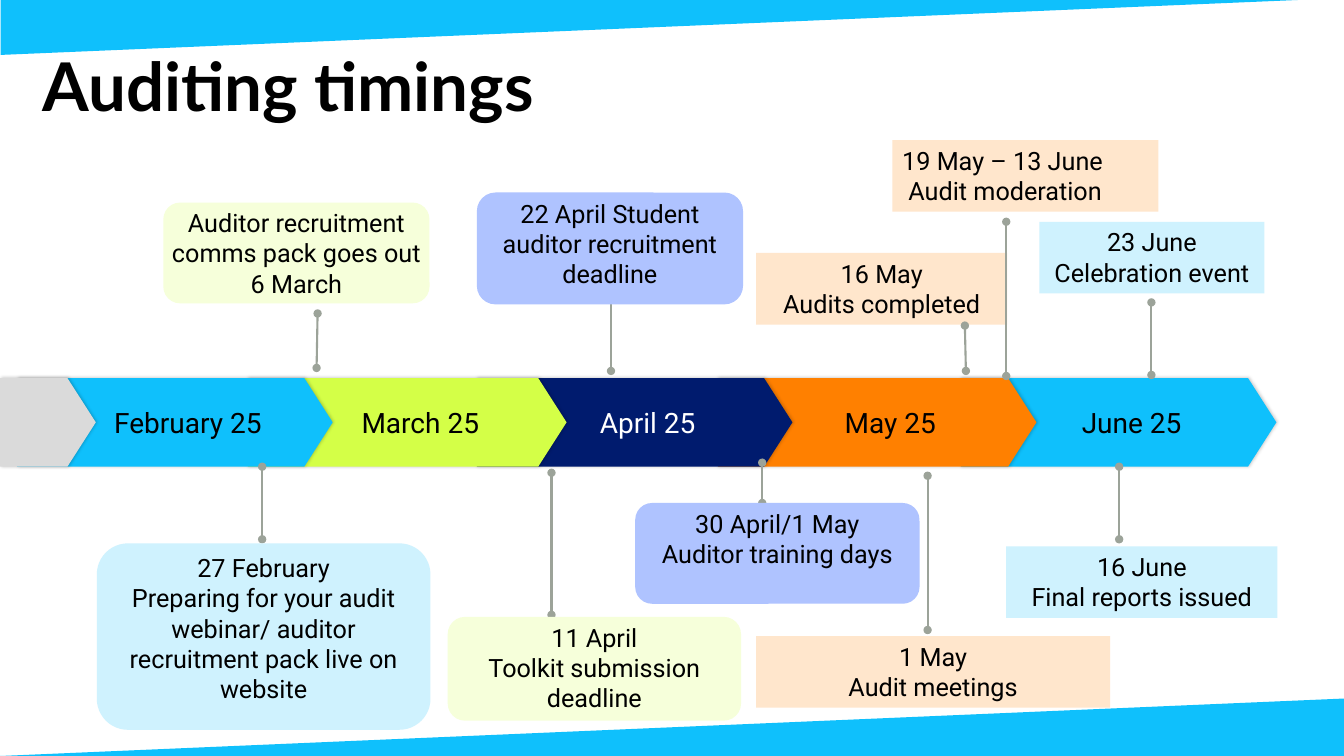
from lxml.etree import SubElement
from pptx import Presentation
from pptx.dml.color import RGBColor
from pptx.enum.shapes import MSO_CONNECTOR, MSO_SHAPE as SHAPE
from pptx.enum.text import MSO_ANCHOR as ANCHOR, MSO_AUTO_SIZE, PP_ALIGN as ALIGN
from pptx.oxml.ns import qn
from pptx.util import Inches, Pt

COLORS = {
    "sky": "0FC0FC", "pale_sky": "CFF2FE",
    "lime": "D4FF47", "pale_lime": "F6FFDA",
    "navy": "001B6E", "pale_navy": "AFC3FF",
    "orange": "FF8000", "pale_orange": "FFE6CC",
    "gray": "DADADA", "line": "9CA399",
    "black": "000000", "white": "FFFFFF",
}

BAND_TOP, BAND_HEIGHT = 3.75, 0.88

MONTHS = [
    ("June 25", 9.53, 3.13, "sky", "black"),
    ("May 25", 7.12, 3.16, "orange", "black"),
    ("April 25", 4.73, 3.13, "navy", "white"),
    ("March 25", 2.46, 3.16, "lime", "black"),
    ("February 25", 0.17, 3.13, "sky", "black"),
    ("", 0, 0.95, "gray", "black"),
]

ROUNDED_EVENTS = [
    (["27 February",
      "Preparing for your audit webinar/ auditor recruitment pack live on website"],
     (0.96, 5.39, 3.31, 1.85), "pale_sky", (2.6, 5.35, 2.6, 4.63)),
    (["Auditor recruitment comms pack goes out 6 March"],
     (1.62, 2.01, 2.64, 1), "pale_lime", (3.14, 3.65, 3.15, 3.11)),
    (["11 April", "Toolkit submission deadline"],
     (4.44, 6.12, 2.91, 1.03), "pale_lime", (5.47, 6.1, 5.47, 4.69)),
    (["22 April Student auditor recruitment deadline"],
     (4.73, 1.91, 2.64, 1.11), "pale_navy", (6.06, 3.68, 6.06, 2.96)),
    (["30 April/1 May", "Auditor training days"],
     (6.3, 4.99, 2.82, 1), "pale_navy", (7.56, 4.99, 7.56, 4.59)),
]

SQUARE_EVENTS = [
    (["16 May", "Audits completed"],
     (7.5, 2.51, 2.49, 0.71), "pale_orange", (9.58, 3.68, 9.57, 3.23), ALIGN.CENTER),
    (["19 May – 13 June", " Audit moderation"],
     (8.85, 1.39, 2.64, 0.71), "pale_orange", (9.98, 3.73, 9.98, 2.2), ALIGN.LEFT),
    (["16 June", "Final reports issued"],
     (9.98, 5.42, 2.69, 0.71), "pale_sky", (11.1, 5.35, 11.1, 4.63), ALIGN.CENTER),
    (["23 June", "Celebration event"],
     (10.31, 2.2, 2.23, 0.71), "pale_sky", (11.42, 3.72, 11.42, 3), ALIGN.CENTER),
    (["1 May", "Audit meetings"],
     (7.5, 6.31, 3.51, 0.71), "pale_orange", (9.2, 6.25, 9.2, 4.72), ALIGN.CENTER),
]


def rgb(name):
    return RGBColor.from_string(COLORS[name])


class Timeline:
    font = "Roboto"

    def __init__(self, slide):
        self.shapes = slide.shapes

    def shape(self, kind, box, color):
        sp = self.shapes.add_shape(kind, *map(Inches, box))
        sp.fill.solid()
        sp.fill.fore_color.rgb = rgb(color)
        sp.line.fill.background()
        sp.shadow.inherit = False
        return sp

    def text(self, sp, lines, size, color="black", align=ALIGN.CENTER,
             anchor=ANCHOR.TOP, insets=(0, 0, 0, 0), font=font, bold=False):
        tf = sp.text_frame
        tf.word_wrap = True
        tf.vertical_anchor = anchor
        tf.margin_left, tf.margin_top, tf.margin_right, tf.margin_bottom = map(Inches, insets)
        tf.text = "\n".join(lines)
        for p in tf.paragraphs:
            p.alignment = align
            for r in p.runs:
                r.font.name = font
                r.font.size = Pt(size)
                r.font.bold = bold
                r.font.color.rgb = rgb(color)
        return tf

    def wedge(self, box, rotation):
        sp = self.shape(SHAPE.RIGHT_TRIANGLE, box, "sky")
        sp.rotation = rotation

    def title(self, text, box):
        sp = self.shapes.add_textbox(*map(Inches, box))
        tf = self.text(sp, [text], 48, align=ALIGN.LEFT, anchor=ANCHOR.MIDDLE,
                       font="Lato", bold=True)
        tf.paragraphs[0].line_spacing = 0.9

    def month(self, label, left, width, color, text_color):
        sp = self.shape(SHAPE.PENTAGON, (left, BAND_TOP, width, BAND_HEIGHT), color)
        sp.adjustments[0] = 0.32
        effects = sp._element.spPr.find(qn("a:effectLst"))
        shadow = SubElement(effects, qn("a:outerShdw"), blurRad=str(Pt(2.2)),
                            dist=str(Pt(0.8)), dir="0", rotWithShape="0")
        tint = SubElement(shadow, qn("a:srgbClr"), val=COLORS["black"])
        SubElement(tint, qn("a:alpha"), val="20000")
        if label:
            self.text(sp, [label], 20, text_color, anchor=ANCHOR.MIDDLE,
                      insets=(0.4, 0, 0, 0))

    def pin(self, ends):
        cx = self.shapes.add_connector(MSO_CONNECTOR.STRAIGHT, *map(Inches, ends))
        cx.line.color.rgb = rgb("line")
        cx.line.width = Pt(1.5)
        ln = cx._element.spPr.find(qn("a:ln"))
        for end in ("a:headEnd", "a:tailEnd"):
            SubElement(ln, qn(end), type="oval")
        SubElement(cx._element.spPr, qn("a:effectLst"))

    def rounded_event(self, lines, box, color, ends):
        self.pin(ends)
        self.text(self.shape(SHAPE.ROUNDED_RECTANGLE, box, color), lines, 18)

    def square_event(self, lines, box, color, ends, align):
        sp = self.shape(SHAPE.RECTANGLE, box, color)
        tf = self.text(sp, lines, 18, align=align, insets=(0.1, 0.05, 0.1, 0.05))
        tf.auto_size = MSO_AUTO_SIZE.SHAPE_TO_FIT_TEXT
        self.pin(ends)


def main():
    prs = Presentation()
    prs.slide_width, prs.slide_height = Inches(13.33), Inches(7.5)
    s = Timeline(prs.slides.add_slide(prs.slide_layouts[6]))
    s.wedge((6.38, 0.55, 0.57, 13.33), 270)
    s.wedge((6.45, -6.47, 0.57, 13.46), 90)
    for month in MONTHS:
        s.month(*month)
    for event in ROUNDED_EVENTS:
        s.rounded_event(*event)
    for event in SQUARE_EVENTS:
        s.square_event(*event)
    s.title("Auditing timings", (0.42, 0.39, 11.27, 1))
    prs.save("out.pptx")


if __name__ == "__main__":
    main()
